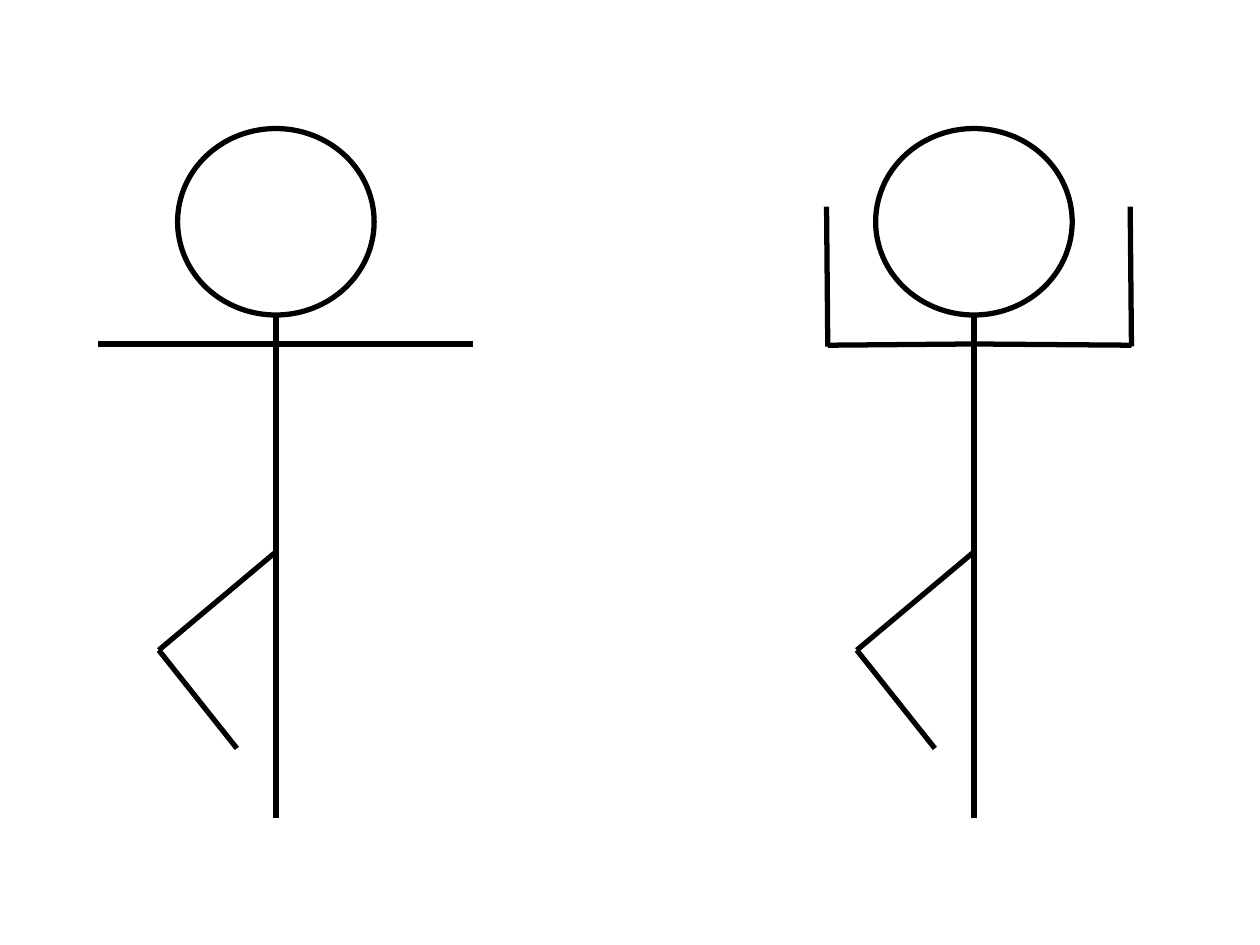
"""Builds a slide with two stick figures standing on one leg."""
from lxml import etree
from pptx import Presentation
from pptx.dml.color import RGBColor
from pptx.enum.shapes import MSO_CONNECTOR, MSO_SHAPE
from pptx.oxml.ns import qn
from pptx.util import Inches, Pt

OVAL = MSO_SHAPE.OVAL
STRAIGHT = MSO_CONNECTOR.STRAIGHT
BLACK, WHITE = "000000", "FFFFFF"
HEAD_WIDTH, HEAD_HEIGHT, HEAD_TOP = 1.56, 1.48, 1.02
NECK, SHOULDER, HIP, KNEE, RAISED_FOOT, FOOT = 2.5, 2.73, 4.38, 5.16, 5.94, 6.49
HAND = 1.64


def rgb(code):
    return RGBColor.from_string(code)


def style_outline(outline):
    outline.color.rgb = rgb(BLACK)
    outline.width = Pt(3)


def add_head(slide, center):
    head = slide.shapes.add_shape(
        OVAL, Inches(center - HEAD_WIDTH / 2), Inches(HEAD_TOP),
        Inches(HEAD_WIDTH), Inches(HEAD_HEIGHT))
    head.shadow.inherit = False
    head.fill.solid()
    head.fill.fore_color.rgb = rgb(WHITE)
    style_outline(head.line)


def add_limb(slide, start, end):
    limb = slide.shapes.add_connector(STRAIGHT, *map(Inches, start + end))
    style_outline(limb.line)
    etree.SubElement(limb._element.spPr, qn("a:effectLst"))


def add_figure(slide, center):
    knee = (center - 0.93, KNEE)
    add_head(slide, center)
    add_limb(slide, (center, NECK), (center, FOOT))
    add_limb(slide, (center, HIP), knee)
    add_limb(slide, (center - 0.31, RAISED_FOOT), knee)


def add_raised_arm(slide, center, elbow):
    add_limb(slide, (center, SHOULDER), (elbow, SHOULDER + 0.01))
    add_limb(slide, (elbow - 0.01, HAND), (elbow, SHOULDER + 0.02))


def main():
    prs = Presentation()
    prs.slide_width, prs.slide_height = Inches(10), Inches(7.5)
    slide = prs.slides.add_slide(prs.slide_layouts[6])

    left_center, right_center = 2.19, 7.73
    add_figure(slide, left_center)
    add_limb(slide, (0.78, SHOULDER), (3.75, SHOULDER))

    add_figure(slide, right_center)
    for elbow in (6.57, 8.98):
        add_raised_arm(slide, right_center, elbow)

    prs.save("out.pptx")


if __name__ == "__main__":
    main()
